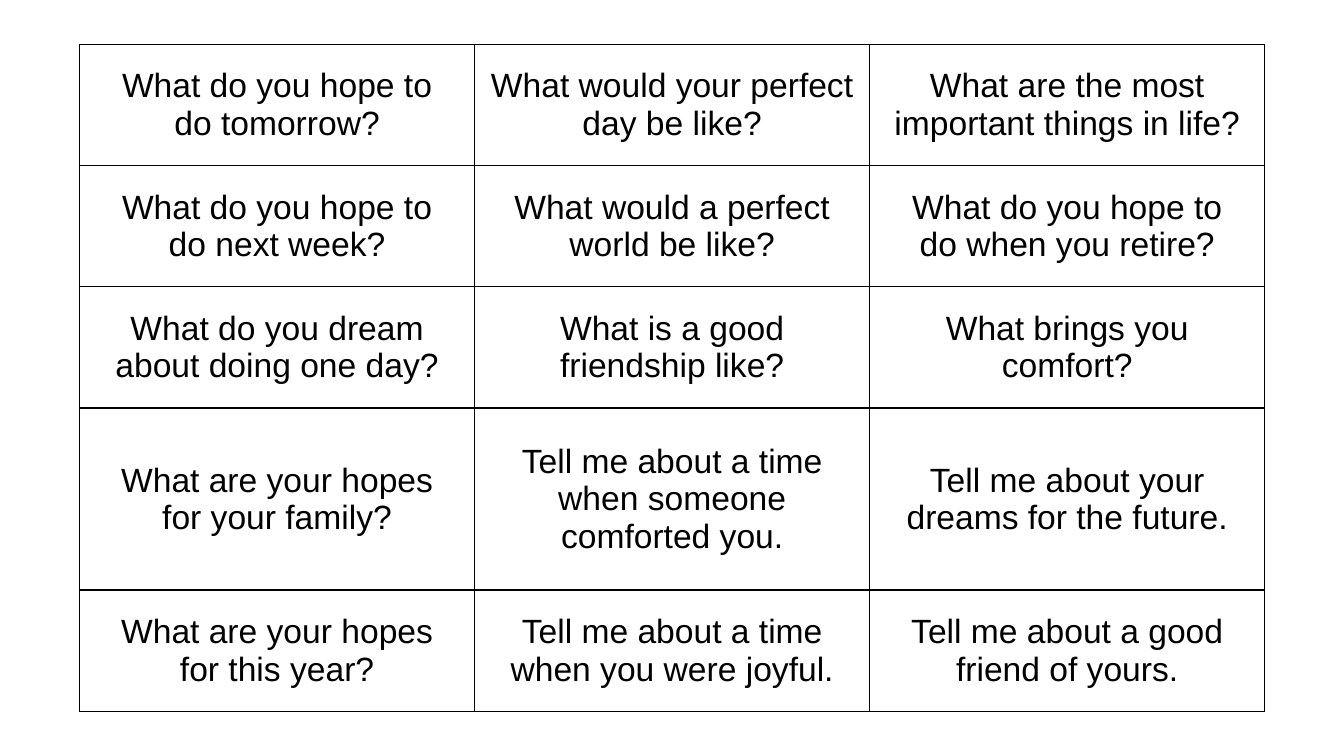
from dataclasses import dataclass

import pptx
import pptx.dml.color
import pptx.enum.text
import pptx.oxml
import pptx.oxml.ns
import pptx.util
from pptx.util import Pt


@dataclass(frozen=True)
class Theme:
    font: str = "Arial"
    size: float = 24
    ink: str = "000000"
    paper: str = "FFFFFF"
    border: float = 1


THEME = Theme()

QUESTIONS = [
    ["What do you hope to\ndo tomorrow?",
     "What would your perfect day be like?",
     "What are the most important things in life?"],
    ["What do you hope to\ndo next week?",
     "What would a perfect world be like?",
     "What do you hope to\ndo when you retire?"],
    ["What do you dream about doing one day?",
     "What is a good\nfriendship like?",
     "What brings you comfort?"],
    ["What are your hopes\nfor your family?",
     "Tell me about a time when someone comforted you.",
     "Tell me about your dreams for the future."],
    ["What are your hopes\nfor this year?",
     "Tell me about a time when you were joyful.",
     "Tell me about a good friend of yours."],
]
# Share of the table height: the fourth row holds three lines of text
ROW_WEIGHTS = [2, 2, 2, 3, 2]


def color(value):
    return pptx.dml.color.RGBColor.from_string(value)


def add_borders(cell):
    properties = cell._tc.get_or_add_tcPr()
    for side in ("lnL", "lnR", "lnT", "lnB"):
        properties.append(pptx.oxml.parse_xml(
            f'<a:{side} {pptx.oxml.ns.nsdecls("a")} w="{Pt(THEME.border)}">'
            f'<a:solidFill><a:srgbClr val="{THEME.ink}"/></a:solidFill>'
            f'</a:{side}>'))


def format_question(cell, question):
    add_borders(cell)
    cell.fill.solid()
    cell.fill.fore_color.rgb = color(THEME.paper)
    cell.vertical_anchor = pptx.enum.text.MSO_ANCHOR.MIDDLE
    cell.margin_left = cell.margin_right = Pt(5)
    cell.margin_top = cell.margin_bottom = 0

    paragraph = cell.text_frame.paragraphs[0]
    paragraph.text = question
    paragraph.alignment = pptx.enum.text.PP_ALIGN.CENTER
    paragraph.space_after = Pt(3)
    paragraph.font.name = THEME.font
    paragraph.font.size = Pt(THEME.size)
    paragraph.font.color.rgb = color(THEME.ink)


def add_question_grid(slide, left, top, width, height):
    row_count, column_count = len(QUESTIONS), len(QUESTIONS[0])
    table = slide.shapes.add_table(row_count, column_count, Pt(left), Pt(top),
                                   Pt(width), Pt(height)).table
    table.first_row = table.horz_banding = False
    for column in table.columns:
        column.width = Pt(width / column_count)
    for row, weight, questions in zip(table.rows, ROW_WEIGHTS, QUESTIONS):
        row.height = Pt(height * weight / sum(ROW_WEIGHTS))
        for cell, question in zip(row.cells, questions):
            format_question(cell, question)


def main():
    presentation = pptx.Presentation()
    presentation.slide_width = Pt(960)
    presentation.slide_height = Pt(540)
    blank_layout = presentation.slide_layouts[6]
    slide = presentation.slides.add_slide(blank_layout)

    # Conversation questions
    add_question_grid(slide, left=56.8, top=31.6, width=846.6, height=476.6)

    presentation.save("out.pptx")


if __name__ == "__main__":
    main()
